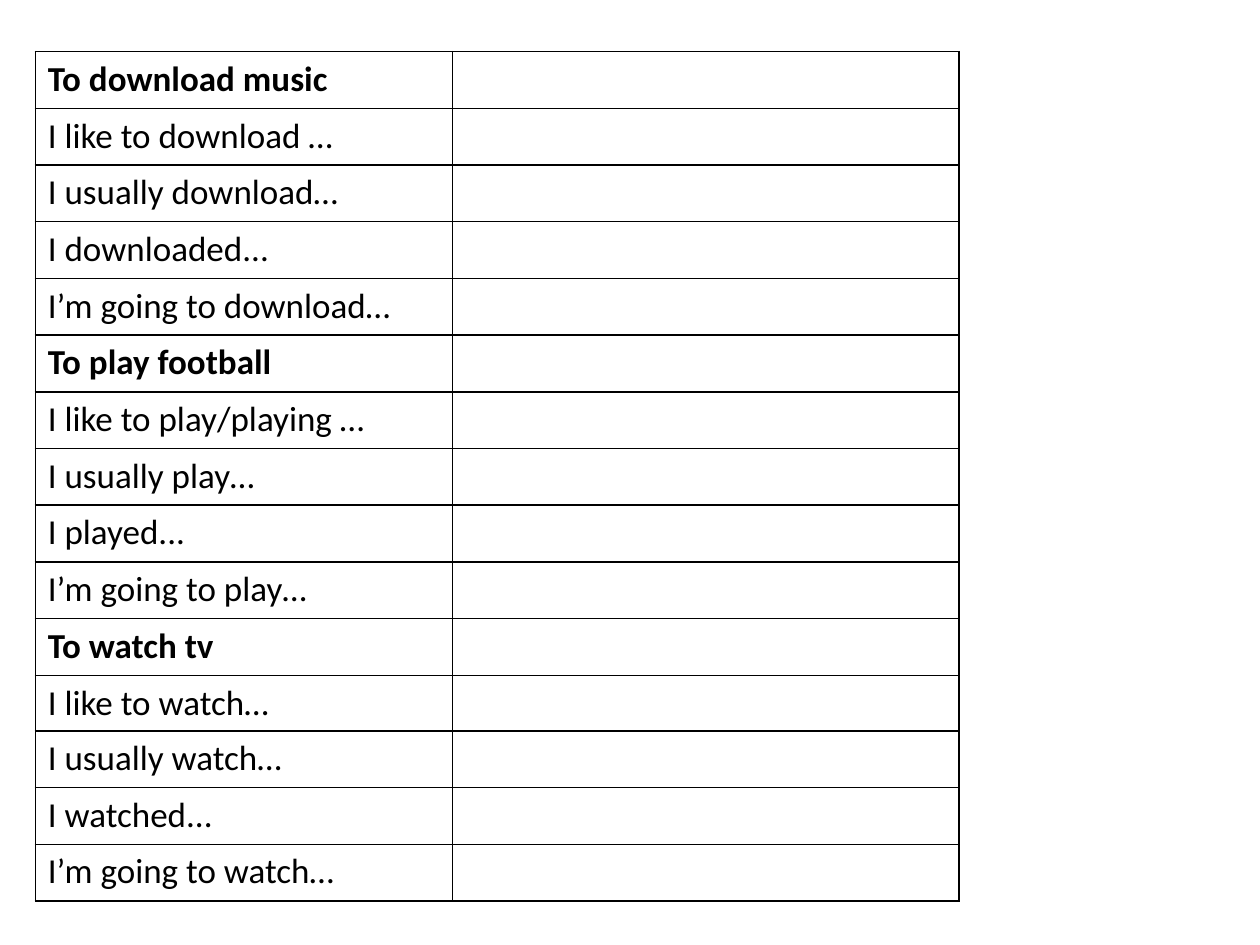
from dataclasses import dataclass

from lxml.etree import SubElement
from pptx import Presentation
from pptx.dml.color import RGBColor
from pptx.oxml.ns import qn
from pptx.table import Table, _Cell as Cell
from pptx.util import Inches, Pt

COLORS = {"text": "000000", "border": "000000"}
FONT = "Calibri"
ROW_HEIGHT = Inches(0.45)
SHORT_ROW, SHORT_HEIGHT = 11, Inches(0.41)
COLUMN_WIDTHS = (Inches(3.31), Inches(4.02))


@dataclass(frozen=True)
class VerbGroup:
    heading: str
    phrases: tuple[str, ...]


GROUPS = (
    VerbGroup("To download music", (
        "I like to download …", "I usually download…",
        "I downloaded...", "I’m going to download…")),
    VerbGroup("To play football", (
        "I like to play/playing …", "I usually play…",
        "I played...", "I’m going to play…")),
    VerbGroup("To watch tv", (
        "I like to watch…", "I usually watch…",
        "I watched...", "I’m going to watch…")),
)


def style_cell(cell: Cell) -> None:
    properties = cell._tc.get_or_add_tcPr()
    for side in ("a:lnL", "a:lnR", "a:lnT", "a:lnB"):
        line = SubElement(properties, qn(side), w=str(Pt(1)))
        fill = SubElement(line, qn("a:solidFill"))
        SubElement(fill, qn("a:srgbClr"), val=COLORS["border"])
    cell.fill.background()


def write_phrase(cell: Cell, text: str, bold: bool) -> None:
    cell.text = text
    font = cell.text_frame.paragraphs[0].font
    font.name = FONT
    font.size = Pt(20)
    font.bold = bold
    font.color.rgb = RGBColor.from_string(COLORS["text"])


def fill_table(table: Table) -> None:
    table.first_row = False
    table.horz_banding = False
    for column, width in zip(table.columns, COLUMN_WIDTHS):
        column.width = width
    for row in table.rows:
        row.height = ROW_HEIGHT
    table.rows[SHORT_ROW].height = SHORT_HEIGHT
    for cell in table.iter_cells():
        style_cell(cell)
    lines = [(text, text == group.heading)
             for group in GROUPS for text in (group.heading, *group.phrases)]
    for index, (text, bold) in enumerate(lines):
        write_phrase(table.cell(index, 0), text, bold)


def main() -> None:
    presentation = Presentation()
    presentation.slide_width = Inches(10)
    presentation.slide_height = Inches(7.5)
    slide = presentation.slides.add_slide(presentation.slide_layouts[6])
    row_count = sum(1 + len(group.phrases) for group in GROUPS)
    frame = slide.shapes.add_table(
        row_count, len(COLUMN_WIDTHS), Inches(0.28), Inches(0.41),
        sum(COLUMN_WIDTHS), ROW_HEIGHT * row_count)
    fill_table(frame.table)
    presentation.save("out.pptx")


if __name__ == "__main__":
    main()
